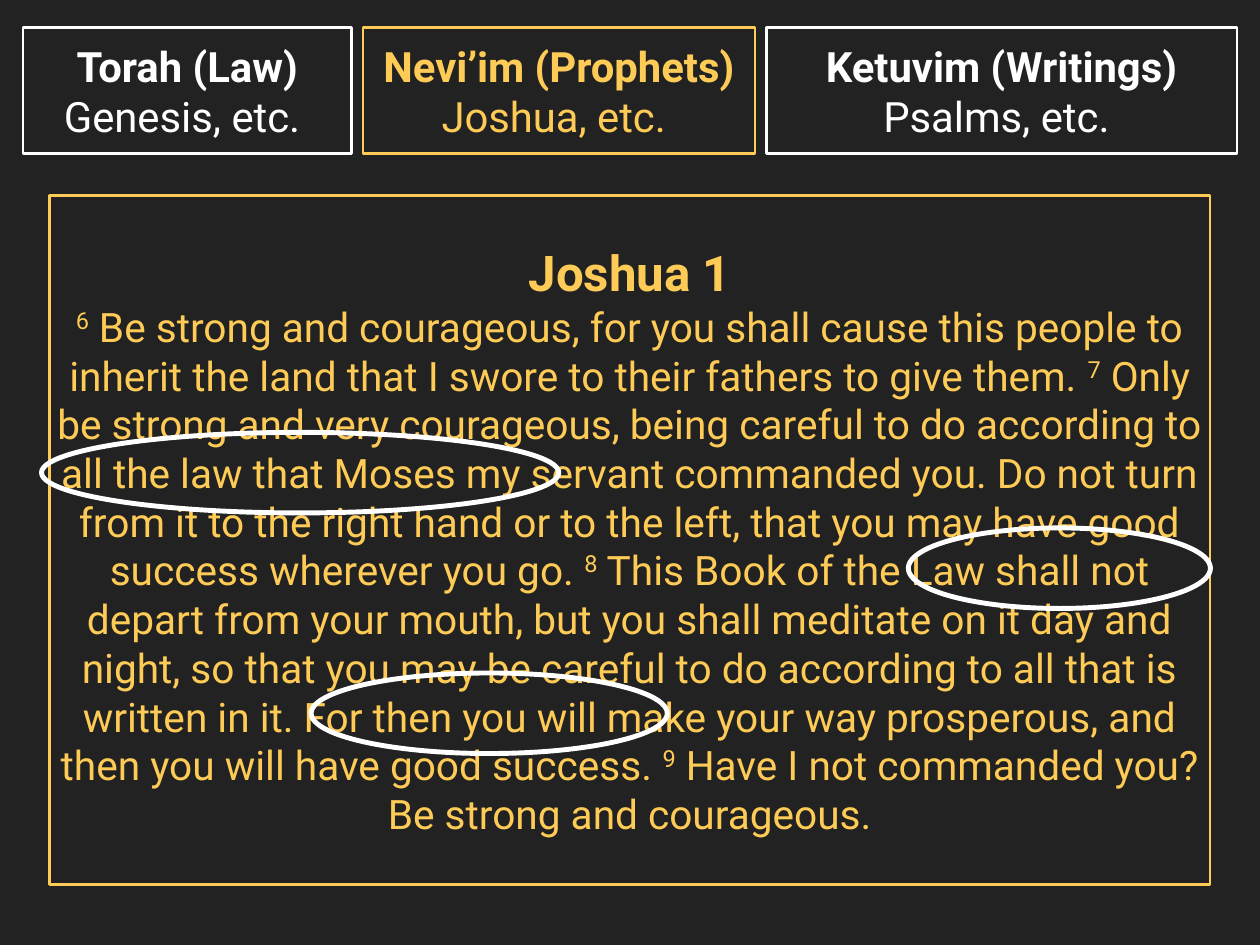
from pptx import Presentation
from pptx.dml.color import RGBColor as RGB
from pptx.enum.shapes import MSO_SHAPE as Shape
from pptx.enum.text import MSO_ANCHOR as Anchor, MSO_AUTO_SIZE as Fit, PP_ALIGN as Align
from pptx.util import Cm, Pt

COLORS = {"dark": "222222", "gold": "FDCB56", "white": "FFFFFF"}
FONT = "Roboto"

# title, example, colour, width in cm
PARTS = [
    ("Torah (Law)", "Genesis, etc. ", "white", 9.42),
    ("Nevi’im (Prophets)", "Joshua, etc. ", "gold", 11.23),
    ("Ketuvim (Writings)", "Psalms, etc. ", "white", 13.49),
]
LEFT, TOP, HIGH, GAP = 0.66, 0.79, 3.61, 0.33

CHAPTER = "Joshua 1"
VERSES = [
    ("6", " Be strong and courageous, for you shall cause this people to inherit "
          "the land that I swore to their fathers to give them. "),
    ("7", " Only be strong and very courageous, being careful to do according to "
          "all the law that Moses my servant commanded you. Do not turn from it to "
          "the right hand or to the left, that you may have good success wherever "
          "you go. "),
    ("8", " This Book of the Law shall not depart from your mouth, but you shall "
          "meditate on it day and night, so that you may be careful to do according "
          "to all that is written in it. For then you will make your way prosperous, "
          "and then you will have good success. "),
    ("9", " Have I not commanded you? Be strong and courageous."),
]
PASSAGE = (1.42, 5.61, 33.27, 19.76)

# left, top, width in cm
RINGS = [(1.19, 12.4, 14.83), (26.04, 15.14, 8.66), (8.92, 19.3, 10.21)]
RING_HIGH = 2.31


def paint(name):
    return RGB.from_string(COLORS[name])


def add_outline(kind, place, color, weight):
    shape = slide.shapes.add_shape(kind, *map(Cm, place))
    shape.shadow.inherit = False
    shape.fill.background()
    shape.line.color.rgb = paint(color)
    shape.line.width = Pt(weight)
    return shape


def add_box(place, color):
    box = add_outline(Shape.RECTANGLE, place, color, 2)
    box.fill.solid()
    box.fill.fore_color.rgb = paint("dark")
    frame = box.text_frame
    frame.word_wrap = True
    frame.auto_size = Fit.SHAPE_TO_FIT_TEXT
    frame.vertical_anchor = Anchor.MIDDLE
    frame.margin_left = frame.margin_right = Cm(0.15)
    frame.margin_top = frame.margin_bottom = Cm(0.15)
    return frame


def style(para, size, color, bold=False):
    para.alignment = Align.CENTER
    font = para.font
    font.name, font.size, font.bold = FONT, Pt(size), bold
    font.color.rgb = paint(color)


def add_verse(para, number, text):
    """Add a raised verse number and its text."""
    mark = para.add_run()
    mark.text = number
    mark._r.get_or_add_rPr().set("baseline", "32000")
    para.add_run().text = text


deck = Presentation()
deck.slide_width, deck.slide_height = Cm(36.12), Cm(27.1)
slide = deck.slides.add_slide(deck.slide_layouts[6])
slide.background.fill.solid()
slide.background.fill.fore_color.rgb = paint("dark")

frame = add_box(PASSAGE, "gold")
head, body = frame.paragraphs[0], frame.add_paragraph()
head.add_run().text = CHAPTER
style(head, 40, "gold", True)
for number, text in VERSES:
    add_verse(body, number, text)
style(body, 33, "gold")

for left, top, width in RINGS:
    add_outline(Shape.OVAL, (left, top, width, RING_HIGH), "white", 4)

left = LEFT
for title, sample, color, width in PARTS:
    frame = add_box((left, TOP, width, HIGH), color)
    head, body = frame.paragraphs[0], frame.add_paragraph()
    head.add_run().text = title
    style(head, 34, color, True)
    body.add_run().text = sample
    style(body, 34, color)
    left += width + GAP

deck.save("out.pptx")
